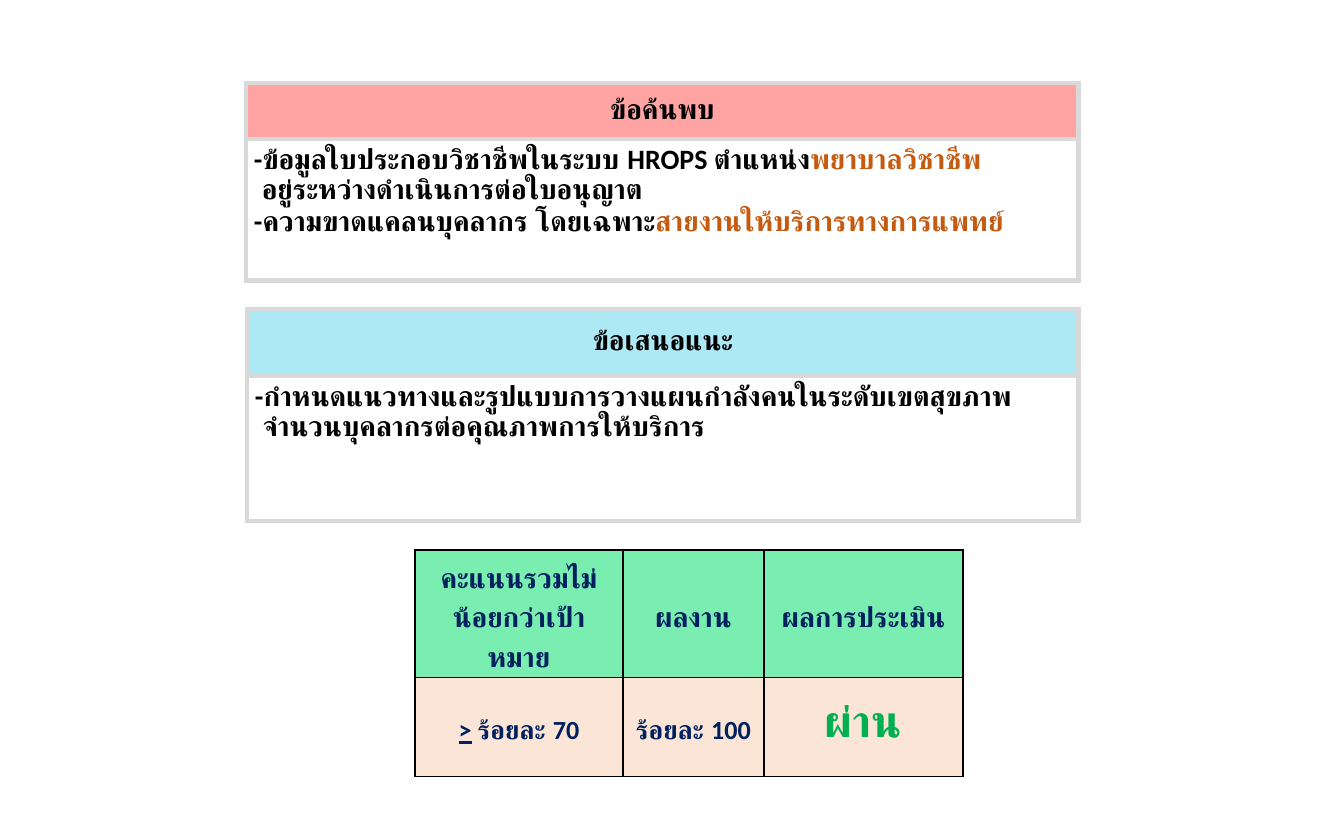
from pptx import Presentation
from pptx import util as u
from pptx.dml.color import RGBColor
from pptx.enum import text
from pptx.oxml import parse_xml
from pptx.oxml.ns import nsdecls

PX = 914400 / 134.4
HUES = {"ink": "000000", "rust": "C55A11", "navy": "002060", "pass": "00B050",
        "rose": "FFA3A3", "sky": "ADE9F5", "mint": "7AEEB1", "peach": "FBE5D6",
        "grey": "D9D9D9"}


def grid(left, top, cols, rows, line, width):
    frame = slide.shapes.add_table(len(rows), len(cols), *[
        round(n * PX) for n in (left, top, sum(cols), sum(rows))])
    table = frame.table
    table.first_row = table.horz_banding = False
    for col, wide in zip(table.columns, cols):
        col.width = round(wide * PX)
    for row, high in zip(table.rows, rows):
        row.height = round(high * PX)
    for cell in table.iter_cells():
        props = cell._tc.get_or_add_tcPr()
        for side in ("lnL", "lnR", "lnT", "lnB"):
            props.append(parse_xml(
                f'<a:{side} {nsdecls("a")} w="{u.Pt(width)}"><a:solidFill>'
                f'<a:srgbClr val="{HUES[line]}"/></a:solidFill></a:{side}>'))
    return table


def write(cell, lines, size, hue, fill=None, mid=True, pad=(8, 4), lead=None):
    cell.margin_left = cell.margin_right = round(pad[0] * PX)
    cell.margin_top = cell.margin_bottom = round(pad[1] * PX)
    if fill:
        cell.fill.solid()
        cell.fill.fore_color.rgb = RGBColor.from_string(HUES[fill])
    else:
        cell.fill.background()
    if mid:
        cell.vertical_anchor = text.MSO_ANCHOR.MIDDLE
    for i, line in enumerate(lines):
        para = cell.text_frame.paragraphs[0] if i == 0 else cell.text_frame.add_paragraph()
        para.alignment = text.PP_ALIGN.CENTER if mid else text.PP_ALIGN.LEFT
        if lead:
            para.line_spacing = u.Pt(lead)
        for words, tint in line:
            run = para.add_run()
            run.text = words
            font = run.font
            font.name, font.size, font.bold = "Calibri", u.Pt(size), True
            font.underline = True if words == ">" else None
            font.color.rgb = RGBColor.from_string(HUES[tint or hue])


deck = Presentation()
deck.slide_width, deck.slide_height = u.Inches(10), u.Inches(6.25)
slide = deck.slides.add_slide(deck.slide_layouts[6])

boxes = [
    (246, 83, 833, (56, 142), "rose", "ข้อค้นพบ", [
        [("-ข้อมูลใบประกอบวิชาชีพในระบบ HROPS ตำแหน่ง", None), ("พยาบาลวิชาชีพ", "rust")],
        [(" อยู่ระหว่างดำเนินการต่อใบอนุญาต", None)],
        [("-ความขาดแคลนบุคลากร โดยเฉพาะ", None), ("สายงานให้บริการทางการแพทย์", "rust")]]),
    (247, 309, 832, (67, 145), "sky", "ข้อเสนอแนะ", [
        [("-กำหนดแนวทางและรูปแบบการวางแผนกำลังคนในระดับเขตสุขภาพ", None)],
        [(" จำนวนบุคลากรต่อคุณภาพการให้บริการ", None)]]),
]
for left, top, wide, rows, fill, head, body in boxes:
    table = grid(left, top, [wide], rows, "grey", 3)
    write(table.cell(0, 0), [[(head, None)]], 15, "ink", fill)
    write(table.cell(1, 0), body, 15, "ink", mid=False)

score = grid(415, 550, (208, 141, 199), (99, 99), "ink", 1)
heads = ["คะแนนรวมไม่น้อยกว่าเป้าหมาย", "ผลงาน", "ผลการประเมิน"]
marks = [([(">", None), (" ร้อยละ 70", None)], 14),
         ([("ร้อยละ 100", None)], 14),
         ([("ผ่าน", "pass")], 24)]
for i, (head, (mark, size)) in enumerate(zip(heads, marks)):
    write(score.cell(0, i), [[(head, None)]], 15, "navy", "mint", pad=(11, 5), lead=21)
    write(score.cell(1, i), [mark], size, "navy", "peach", pad=(11, 5), lead=21)

deck.save("out.pptx")
